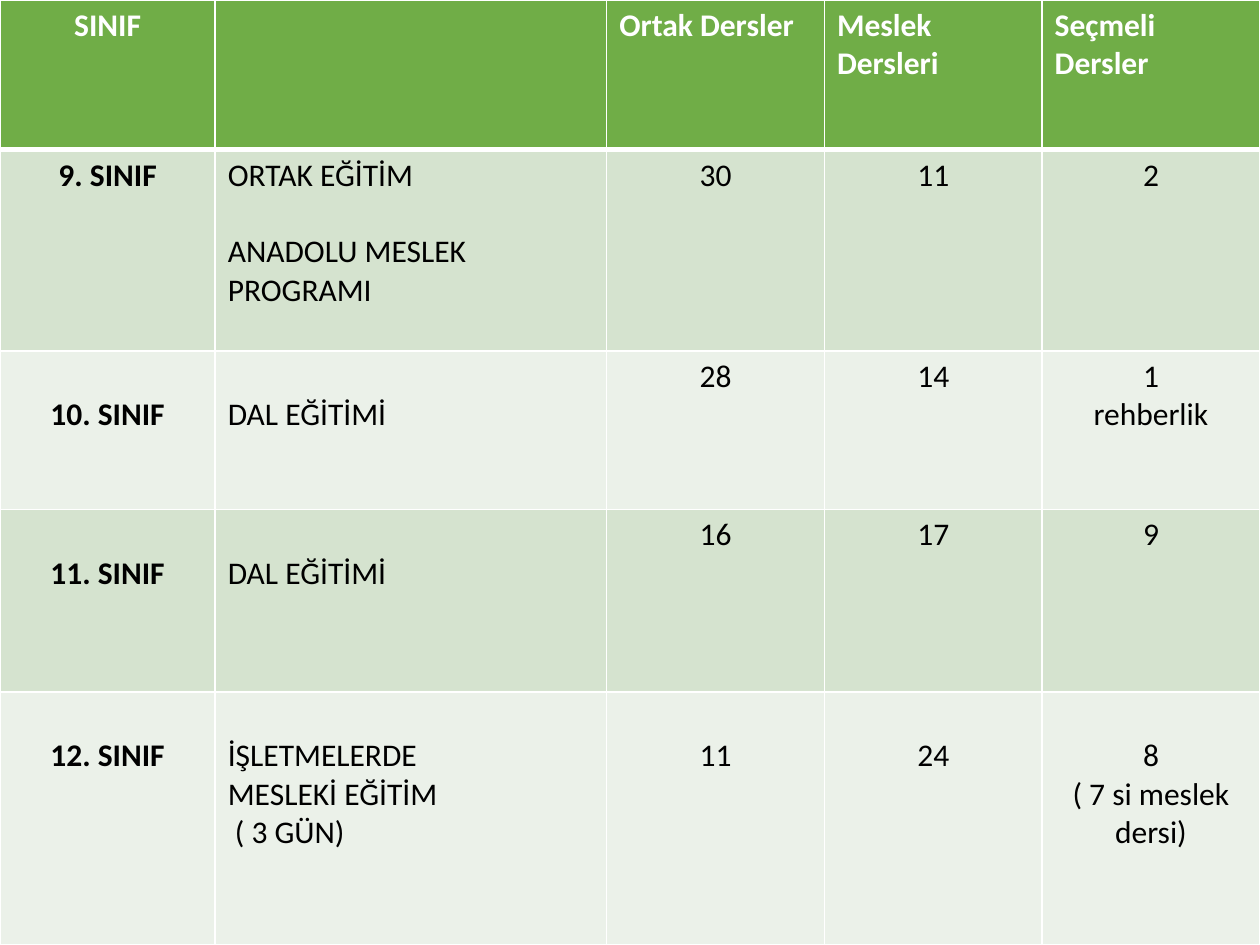
from lxml import etree
from pptx import Presentation, util as u
from pptx.dml.color import RGBColor
from pptx.enum import text
from pptx.oxml import ns

COLORS = {"header": "70AD47", "odd": "D5E3CF", "even": "EBF1E9",
          "white": "FFFFFF", "black": "000000"}
LINE = u.Pt(22)
INSET = u.Inches(0.05)
COLUMNS = [1.71, 3.11, 1.73, 1.73, 1.73]
ROWS = [1.19, 1.6, 1.26, 1.45, 2.01]
CONTENT = [
    [["SINIF"], [], ["Ortak Dersler"], ["Meslek Dersleri"], ["Seçmeli Dersler"]],
    [["9. SINIF"], ["ORTAK EĞİTİM", "ANADOLU MESLEK PROGRAMI"], ["30"], ["11"], ["2"]],
    [["10. SINIF"], ["DAL EĞİTİMİ"], ["28"], ["14"], ["1", "rehberlik"]],
    [["11. SINIF"], ["DAL EĞİTİMİ"], ["16"], ["17"], ["9"]],
    [["12. SINIF"], ["İŞLETMELERDE", "MESLEKİ EĞİTİM", " ( 3 GÜN)"],
     ["11"], ["24"], ["8", "( 7 si meslek dersi)"]],
]
LOWERED = {(2, 0), (2, 1), (3, 0), (3, 1)} | {(4, column) for column in range(5)}
SPACED = (1, 1)


class SlideBuilder:
    def __init__(self, presentation):
        self.width = presentation.slide_width
        self.height = presentation.slide_height
        self.slide = presentation.slides.add_slide(presentation.slide_layouts[6])
        self.font = {"name": "Calibri", "size": u.Pt(18)}

    def table(self, content, columns, rows):
        frame = self.slide.shapes.add_table(
            len(rows), len(columns), 0, 0, self.width, self.height)
        table = frame.table
        table.horz_banding = False
        for column, share in zip(table.columns, columns):
            column.width = int(self.width * share / sum(columns))
        for row, share in zip(table.rows, rows):
            row.height = int(self.height * share / sum(rows))
        for row, line in enumerate(content):
            for column, lines in enumerate(line):
                self.cell(table.cell(row, column), row, column, lines)

    def cell(self, cell, row, column, lines):
        self.borders(cell, {"L": 1, "R": 1, "T": 3 if row == 1 else 1,
                            "B": 3 if row == 0 else 1})
        fill = "header" if row == 0 else "odd" if row % 2 else "even"
        cell.fill.solid()
        cell.fill.fore_color.rgb = RGBColor.from_string(COLORS[fill])
        cell.margin_top = INSET + (LINE if (row, column) in LOWERED else 0)
        centred = column == 0 or (row > 0 and column > 1)
        self.paragraphs(cell.text_frame, lines, centred,
                        {"bold": row == 0 or column == 0},
                        "black" if row else "white",
                        LINE if (row, column) == SPACED else 0)

    def borders(self, cell, widths):
        properties = cell._tc.get_or_add_tcPr()
        for side, width in widths.items():
            line = etree.SubElement(properties, ns.qn(f"a:ln{side}"), w=str(u.Pt(width)))
            fill = etree.SubElement(line, ns.qn("a:solidFill"))
            etree.SubElement(fill, ns.qn("a:srgbClr"), val=COLORS["white"])

    def paragraphs(self, frame, lines, centred, style, color, gap):
        for index, words in enumerate(lines):
            paragraph = frame.add_paragraph() if index else frame.paragraphs[0]
            paragraph.alignment = text.PP_ALIGN.CENTER if centred else text.PP_ALIGN.LEFT
            if index and gap:
                paragraph.space_before = gap
            run = paragraph.add_run()
            run.text = words
            for name, value in {**self.font, **style}.items():
                setattr(run.font, name, value)
            run.font.color.rgb = RGBColor.from_string(COLORS[color])


def main():
    presentation = Presentation()
    presentation.slide_width = u.Inches(10)
    presentation.slide_height = u.Inches(7.5)
    SlideBuilder(presentation).table(CONTENT, COLUMNS, ROWS)
    presentation.save("out.pptx")


if __name__ == "__main__":
    main()
